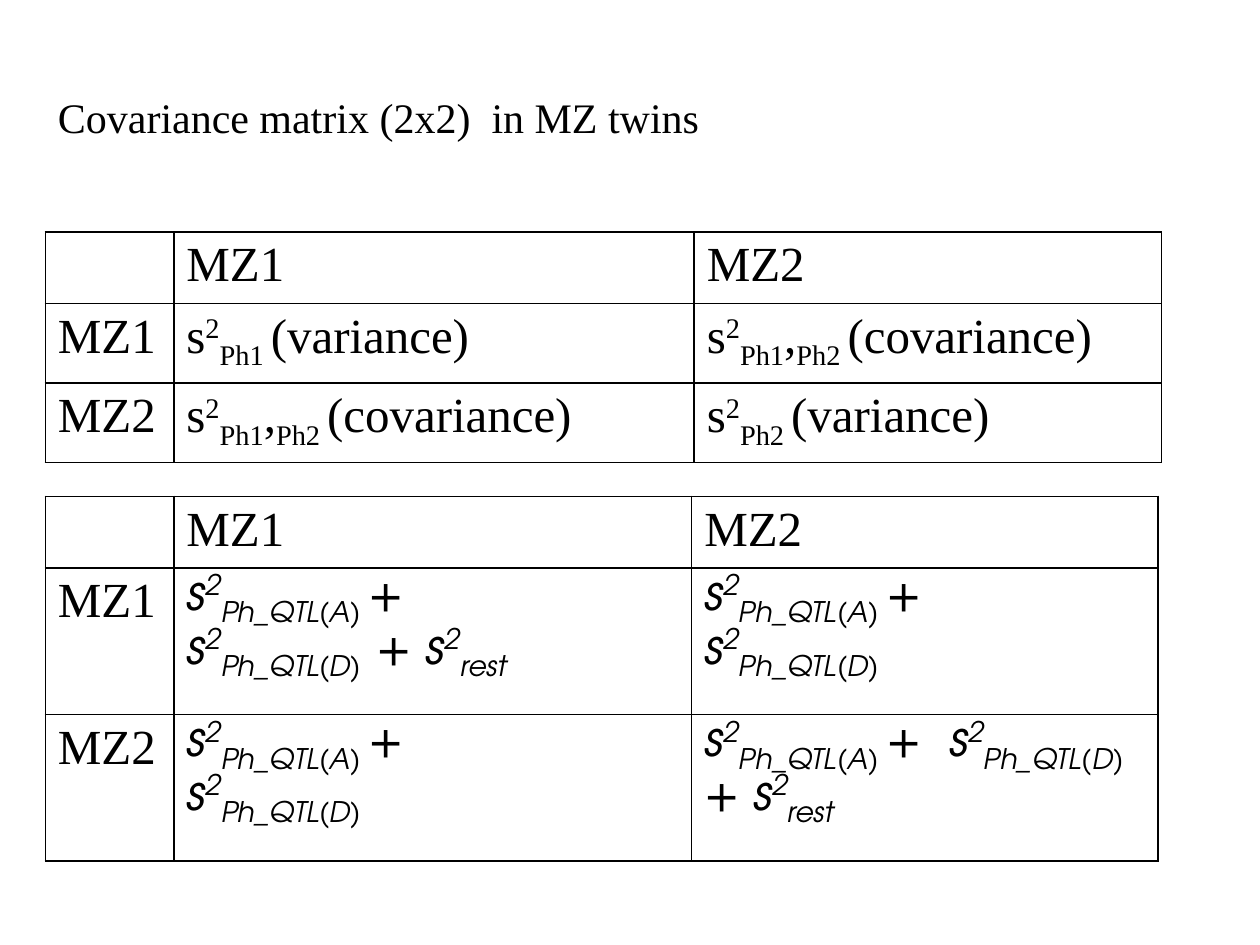
from dataclasses import dataclass
from typing import NamedTuple

from pptx import Presentation, util as u
from pptx.dml.color import RGBColor
from pptx.enum import text
from pptx.oxml import parse_xml
from pptx.oxml.ns import nsdecls

SERIF = "Times New Roman"
SANS = "TeX Gyre Adventor"
BLACK = "000000"


class Run(NamedTuple):
    text: str
    baseline: int = 0  # percent: above zero raises, below zero lowers


Line = list[Run]


@dataclass
class Cell:
    lines: list[Line]
    font: str = SERIF
    italic: bool = False


@dataclass
class Matrix:
    top: float
    columns: list[float]
    rows: list[float]
    body: list[list[Cell]]


def term(subscript: str, lead: str = "") -> Line:
    """s squared with a subscript, after an optional lead."""
    return [Run(lead + "s"), Run("2", 30), Run(subscript, -25)]


def label(caption: str) -> Cell:
    return Cell([[Run(caption)]])


def formula(*lines: Line) -> Cell:
    return Cell(list(lines), SANS, True)


def variance(person: str) -> Cell:
    return Cell([term(f"{person} ") + [Run("(variance)")]])


def covariance() -> Cell:
    return Cell([term("Ph1") + [Run(","), Run("Ph2 ", -25), Run("(covariance)")]])


def color(value: str) -> RGBColor:
    return RGBColor.from_string(value)


def style_font(paragraph, name: str, size: float, italic: bool = False) -> None:
    font = paragraph.font
    font.name, font.size, font.italic = name, u.Pt(size), italic
    font.bold = False
    font.color.rgb = color(BLACK)


def add_borders(cell) -> None:
    properties = cell._tc.get_or_add_tcPr()
    for side in "LRTB":
        properties.append(parse_xml(
            f'<a:ln{side} {nsdecls("a")} w="12700"><a:solidFill>'
            f'<a:srgbClr val="{BLACK}"/></a:solidFill></a:ln{side}>'))


def fill_cell(cell, content: Cell) -> None:
    frame = cell.text_frame
    for index, line in enumerate(content.lines):
        paragraph = frame.add_paragraph() if index else frame.paragraphs[0]
        style_font(paragraph, content.font, 28, content.italic)
        for part in line:
            run = paragraph.add_run()
            run.text = part.text
            if part.baseline:
                run._r.get_or_add_rPr().set("baseline", str(part.baseline * 1000))


def add_matrix(slide, matrix: Matrix) -> None:
    header = [Cell([]), label("MZ1"), label("MZ2")]
    grid = [header] + [[label(f"MZ{number}"), *cells]
                       for number, cells in enumerate(matrix.body, 1)]
    table = slide.shapes.add_table(
        len(grid), len(header), u.Inches(0.36), u.Inches(matrix.top),
        u.Inches(sum(matrix.columns)), u.Inches(sum(matrix.rows))).table
    table.first_row = table.horz_banding = False
    for column, width in zip(table.columns, matrix.columns):
        column.width = u.Inches(width)
    for row, height, contents in zip(table.rows, matrix.rows, grid):
        row.height = u.Inches(height)
        for cell, content in zip(row.cells, contents):
            add_borders(cell)
            cell.fill.background()
            fill_cell(cell, content)


def add_title(slide, caption: str) -> None:
    title = slide.shapes.title
    title.left, title.top = u.Inches(0.36), u.Inches(0.68)
    title.width, title.height = u.Inches(5.34), u.Inches(0.5)
    frame = title.text_frame
    frame.text = caption
    frame.word_wrap = False
    frame.auto_size = text.MSO_AUTO_SIZE.SHAPE_TO_FIT_TEXT
    frame.vertical_anchor = text.MSO_ANCHOR.TOP
    paragraph = frame.paragraphs[0]
    paragraph.alignment = text.PP_ALIGN.LEFT
    style_font(paragraph, SERIF, 24)


def main() -> None:
    presentation = Presentation()
    presentation.slide_width, presentation.slide_height = u.Inches(10), u.Inches(7.5)
    slide = presentation.slides.add_slide(presentation.slide_layouts[5])
    add_title(slide, "Covariance matrix (2x2)  in MZ twins")

    add_matrix(slide, Matrix(1.84, [1.02, 4.13, 3.71], [0.53, 0.59, 0.59], [
        [variance("Ph1"), covariance()],
        [covariance(), variance("Ph2")],
    ]))

    additive = term("Ph_QTL(A) ") + [Run("+")]
    dominance = term("Ph_QTL(D)")
    rest = term("rest", "+ ")
    shared = formula(additive, dominance)
    add_matrix(slide, Matrix(3.94, [1.02, 4.11, 3.7], [0.53, 0.95, 0.95], [
        [formula(additive, term("Ph_QTL(D)  ") + rest), shared],
        [shared, formula(term("Ph_QTL(A) ") + term("Ph_QTL(D)  ", "+  ") + rest)],
    ]))
    presentation.save("out.pptx")


if __name__ == "__main__":
    main()
